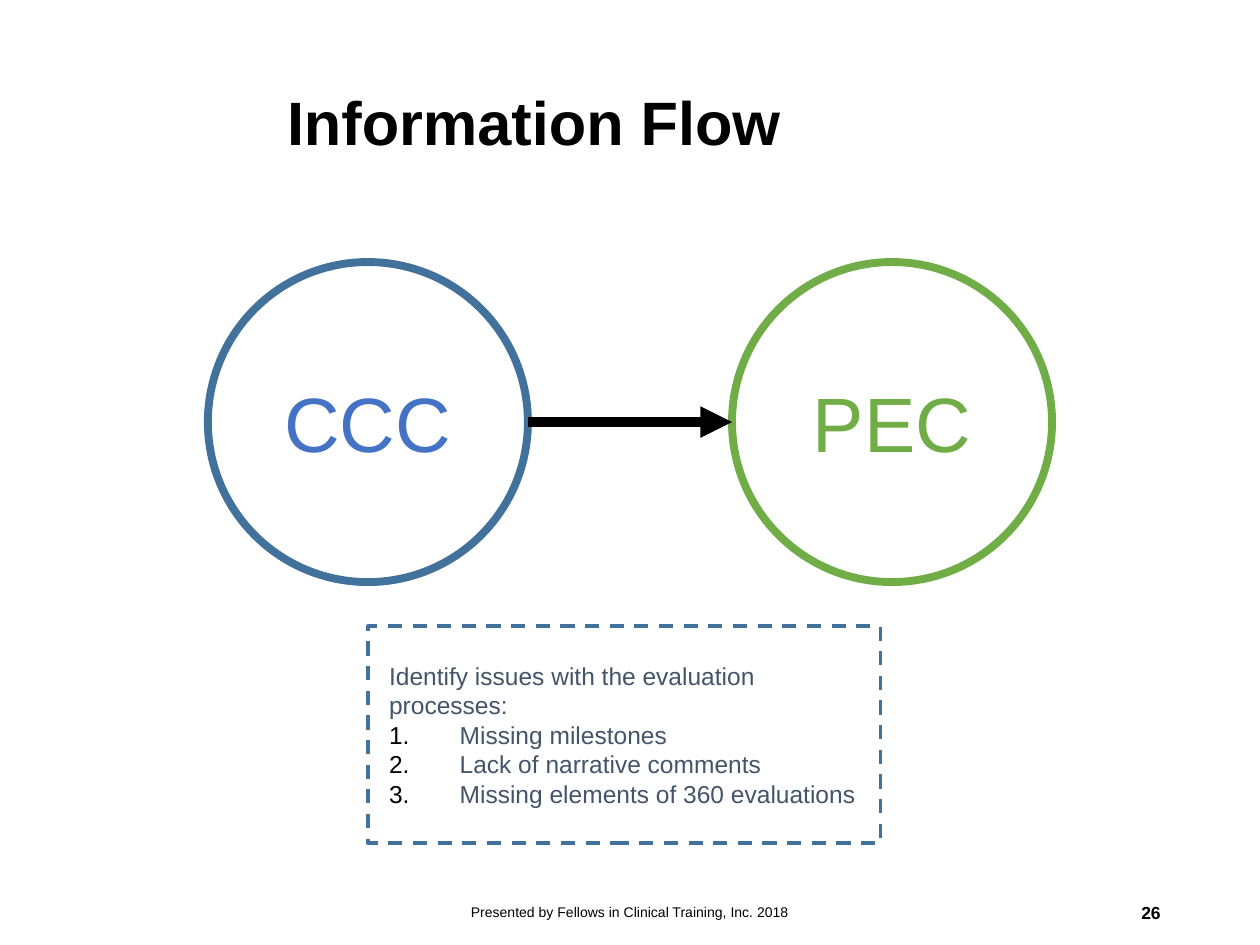
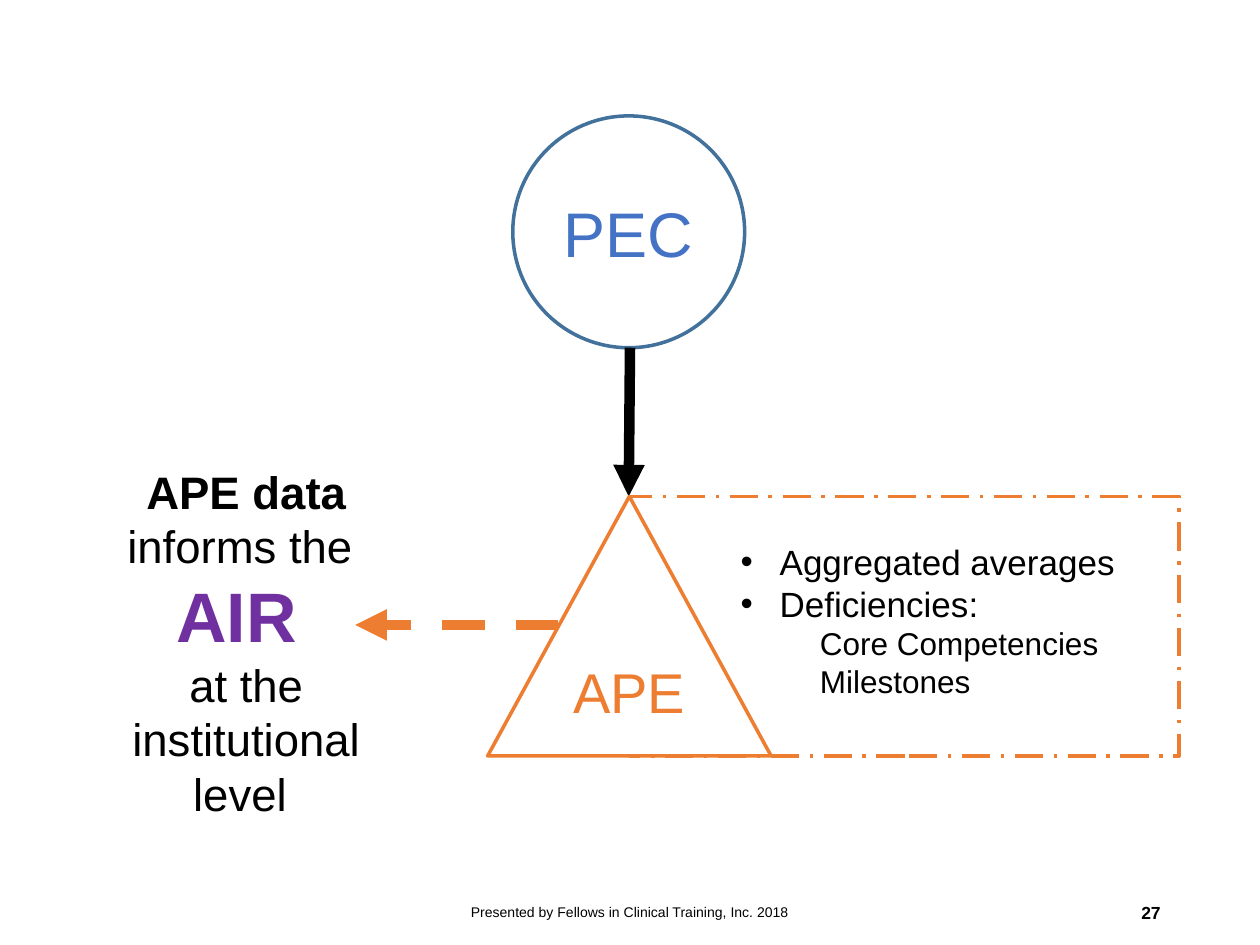
from lxml import etree
from pptx import Presentation
from pptx import util as u
from pptx.dml.color import RGBColor
from pptx.enum import dml, shapes, text
from pptx.oxml.ns import qn

# Shared look; the grid has 100 columns and 75 rows
CELL = u.Inches(0.1)
FONT = "Arial"
BLACK, WHITE, SLATE = "000000", "FFFFFF", "44546A"
BLUE, RIM, GREEN = "4472C4", "42719B", "70AD47"
ORANGE, PURPLE = "ED7D31", "7030A0"
MID, LEFT, RIGHT = text.PP_ALIGN.CENTER, text.PP_ALIGN.LEFT, text.PP_ALIGN.RIGHT
KIND, DASH = shapes.MSO_SHAPE, dml.MSO_LINE
hue = RGBColor.from_string


def put(slide, box, lines=(), kind=None, rim=None, wide=2, dash=None,
        fill=None, align=MID, top=False):
    """Place a shape, or a text box if no kind is given.
    A line is (words, size, colour, bold, margin, hang, bullet)."""
    spot = [int(n * CELL) for n in box]
    if kind is None:
        item = slide.shapes.add_textbox(*spot)
    else:
        item = slide.shapes.add_shape(kind, *spot)
        item.shadow.inherit = False
        if fill:
            item.fill.solid()
            item.fill.fore_color.rgb = hue(fill)
        else:
            item.fill.background()
        item.line.color.rgb = hue(rim)
        item.line.width = u.Pt(wide)
        item.line.dash_style = dash
    frame = item.text_frame
    frame.word_wrap = True
    frame.vertical_anchor = text.MSO_ANCHOR.TOP if top else text.MSO_ANCHOR.MIDDLE
    for i, line in enumerate(lines):
        words, size, tint, bold, left, hang, mark = (*line, *(False, 0, 0, None)[len(line) - 3:])
        para = frame.paragraphs[0] if i == 0 else frame.add_paragraph()
        para.alignment = align
        props = para._p.get_or_add_pPr()
        props.set("marL", str(u.Inches(left)))
        props.set("indent", str(u.Inches(hang)))
        if mark:
            paint = etree.SubElement(props, qn("a:buClr"))
            etree.SubElement(paint, qn("a:srgbClr"), val=BLACK)
            if mark == "1.":
                etree.SubElement(props, qn("a:buAutoNum"), type="arabicPeriod")
            else:
                etree.SubElement(props, qn("a:buFont"), typeface=FONT)
                etree.SubElement(props, qn("a:buChar"), char=mark)
        para.font.name, para.font.size = FONT, u.Pt(size)
        para.font.color.rgb, para.font.bold = hue(tint), bold
        para.add_run().text = words
    return item


def link(slide, ends, tint, dash=None):
    """Draw a thick arrow between two grid points."""
    line = slide.shapes.add_connector(
        shapes.MSO_CONNECTOR.STRAIGHT, *[int(n * CELL) for n in ends])
    line.line.color.rgb = hue(tint)
    line.line.width = u.Pt(6)
    line.line.dash_style = dash
    etree.SubElement(line.line._get_or_add_ln(), qn("a:tailEnd"), type="triangle")
    etree.SubElement(line._element.spPr, qn("a:effectLst"))


deck = Presentation()
deck.slide_width, deck.slide_height = 100 * CELL, 75 * CELL
flow, air = [deck.slides.add_slide(deck.slide_layouts[6]) for _ in range(2)]

# Footer and page number
for page, slide in enumerate((flow, air), 26):
    put(slide, (33.1, 70.4, 33.8, 4),
        [("Presented by Fellows in Clinical Training, Inc. 2018", 8, BLACK)])
    put(slide, (70.6, 70.4, 22.5, 4), [(str(page), 10, BLACK, True)], align=RIGHT)

# Slide 1: title
title = put(flow, (21.8, 2.7, 71.4, 14.5),
            [("Information Flow", 35, BLACK, True)], align=LEFT)
title.text_frame.paragraphs[0].line_spacing = 0.9

# Two committees and the arrow between them
for x, name, rim, tint in ((16.5, "CCC", RIM, BLUE), (58.1, "PEC", GREEN, GREEN)):
    put(flow, (x, 20.8, 25.4, 25.4), [(name, 44, tint)], KIND.OVAL, rim, 4.5)
link(flow, (41.9, 33.5, 58.1, 33.5), BLACK)

# Issues passed on
issues = [("Identify issues with the evaluation processes:", 14, SLATE, False, 0.07)]
for gap in ("Missing milestones", "Lack of narrative comments",
            "Missing elements of 360 evaluations"):
    issues.append((gap, 14, SLATE, False, 0.63, -0.56, "1."))
put(flow, (29.2, 49.7, 40.7, 17.2), issues, KIND.RECTANGLE, RIM,
    dash=DASH.DASH, align=LEFT)

# Slide 2: what the data is for
goal = put(air, (6.4, 36.3, 25.6, 26.3),
           [("APE data ", 26, BLACK, None, 0.07),
            ("AIR ", 40, PURPLE, True, 0.07),
            ("at the institutional level ", 26, BLACK, False, 0.07)], top=True)
lead = goal.text_frame.paragraphs[0]
lead.runs[0].font.bold = True
lead.add_run().text = "informs the "

# Committee above, with its arrow down
put(air, (40.7, 9.2, 18.4, 18.4), [("PEC", 36, BLUE)], KIND.OVAL, RIM)
link(air, (50, 27.6, 49.9, 39.4), BLACK)

# Evaluation triangle over its frame
put(air, (50, 39.4, 43.6, 20.6), kind=KIND.RECTANGLE, rim=ORANGE,
    dash=DASH.LONG_DASH_DOT)
put(air, (38.7, 39.4, 22.5, 20.6), [("APE", 32, ORANGE)],
    KIND.ISOSCELES_TRIANGLE, ORANGE, fill=WHITE)
link(air, (44.3, 49.6, 28.2, 49.6), ORANGE, DASH.DASH)

# Findings
finds = [(find, 20, BLACK, False, 0.31, -0.31, "•")
         for find in ("Aggregated averages", "Deficiencies:")]
finds += [(find, 18, BLACK, False, 0.63) for find in ("Core Competencies", "Milestones")]
put(air, (57.8, 42.4, 33, 16.2), finds, align=LEFT, top=True)

deck.save("out.pptx")
